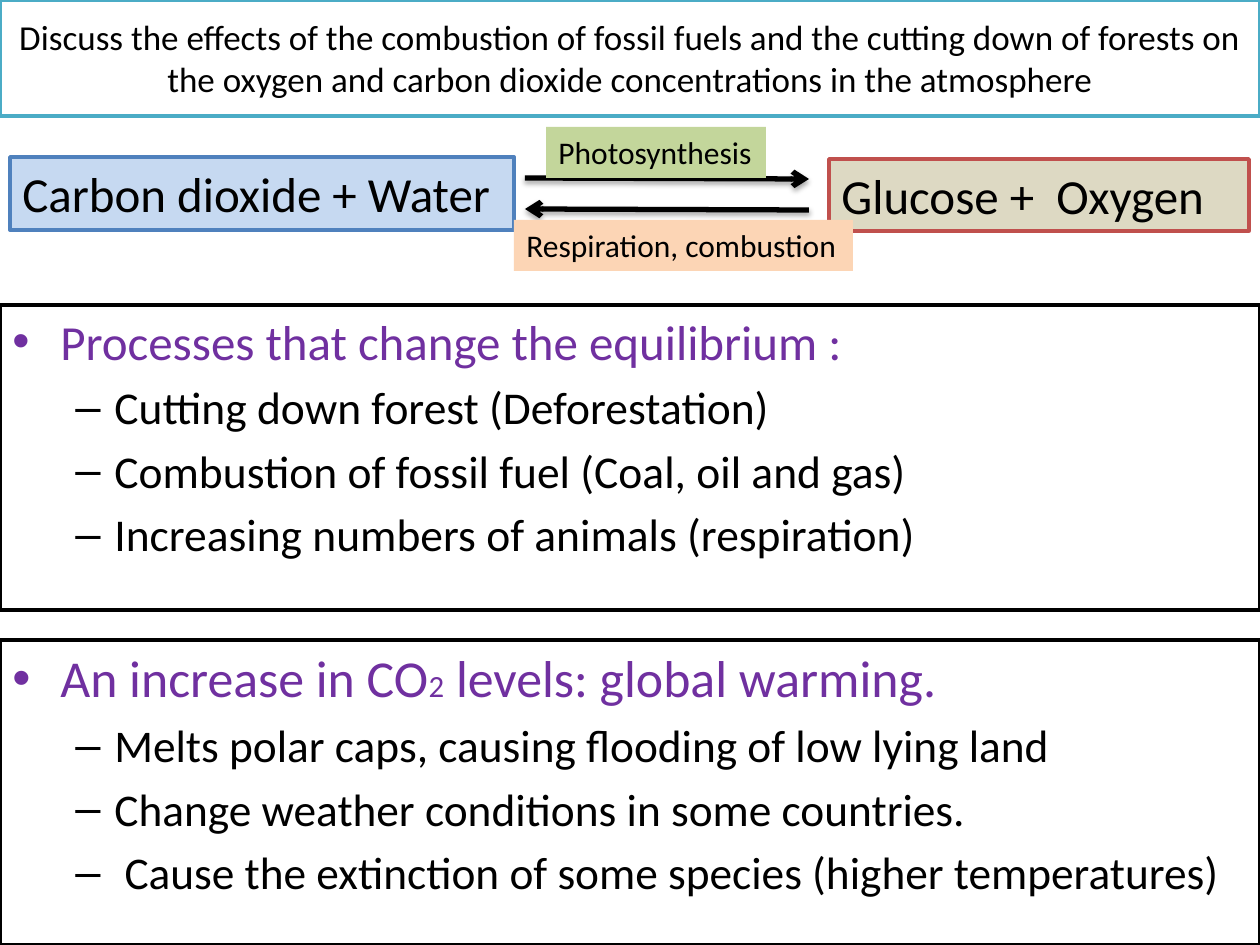
import pptx
import pptx.util
import pptx.dml.color
import pptx.enum.shapes
import pptx.enum.text
import pptx.oxml
import pptx.oxml.ns
from dataclasses import dataclass


@dataclass(frozen=True)
class Theme:
    font: str = "Calibri"
    black: str = "000000"
    white: str = "FFFFFF"
    purple: str = "7030A0"
    aqua: str = "4BACC6"
    blue: str = "4F81BD"
    pale_blue: str = "C6D9F1"
    red: str = "C0504D"
    tan: str = "DDD9C3"
    green: str = "C3D69B"
    orange: str = "FCD5B5"
    title: float = 20
    formula: float = 28
    label: float = 18
    outline: float = 2
    arrow: float = 3


T = Theme()
W, H = 1260, 945
PX = 914400 / 126
ALIGN = pptx.enum.text.PP_ALIGN
ANCHOR = pptx.enum.text.MSO_ANCHOR

TITLE = [
    "Discuss the effects of the combustion of fossil fuels and the cutting down of forests on",
    "the oxygen and carbon dioxide concentrations in the atmosphere",
]
FORMULAS = [
    ("Carbon dioxide + Water", (10, 157, 504, 73), T.pale_blue, T.blue),
    ("Glucose +  Oxygen", (829, 159, 420, 72), T.tan, T.red),
]
ARROWS = [((525, 178), (809, 179)), ((809, 210), (525, 209))]
LABELS = [
    ("Photosynthesis", (546, 127, 220, 51), T.green),
    ("Respiration, combustion", (514, 220, 339, 51), T.orange),
]
PANELS = [
    (305, [("Processes that change the equilibrium :", 28)], 26, [
        "Cutting down forest (Deforestation)",
        "Combustion of fossil fuel (Coal, oil and gas)",
        "Increasing numbers of animals (respiration)",
    ]),
    (640, [("An increase in CO", 29.6), ("2", 17.6), (" levels: global warming.", 29.6)], 25.9, [
        "Melts polar caps, causing flooding of low lying land",
        "Change weather conditions in some countries.",
        " Cause the extinction of some species (higher temperatures)",
    ]),
]
PANEL_H = 305
BULLETS = [("•", 48, 48), ("–", 102, 39)]


def emu(px):
    return round(px * PX)


def rgb(color):
    return pptx.dml.color.RGBColor.from_string(color)


def add_xml(parent, tag, body="", **attrs):
    values = " ".join(f'{k}="{v}"' for k, v in attrs.items())
    ns = pptx.oxml.ns.nsdecls("a")
    parent.append(pptx.oxml.parse_xml(f"<a:{tag} {ns} {values}>{body}</a:{tag}>"))


def add_box(s, at, fill, line=None, anchor=ANCHOR.TOP, wrap=True):
    sp = s.shapes.add_shape(pptx.enum.shapes.MSO_SHAPE.RECTANGLE, *map(emu, at))
    sp.shadow.inherit = False
    sp.fill.solid()
    sp.fill.fore_color.rgb = rgb(fill)
    if line:
        sp.line.color.rgb = rgb(line)
        sp.line.width = pptx.util.Pt(T.outline)
    else:
        sp.line.fill.background()
    tf = sp.text_frame
    tf.word_wrap = wrap
    tf.vertical_anchor = anchor
    tf.paragraphs[0].alignment = ALIGN.LEFT
    return tf


def add_run(p, text, size, color=T.black):
    r = p.add_run()
    r.text = text
    r.font.name = T.font
    r.font.size = pptx.util.Pt(size)
    r.font.color.rgb = rgb(color)


def add_title(s):
    p = add_box(s, (0, 0, W, 116), T.white, T.aqua, ANCHOR.MIDDLE).paragraphs[0]
    p.alignment = ALIGN.CENTER
    for i, text in enumerate(TITLE):
        if i:
            p.add_line_break()
        add_run(p, text, T.title)


def add_arrow(s, start, end):
    kind = pptx.enum.shapes.MSO_CONNECTOR.STRAIGHT
    cx = s.shapes.add_connector(kind, *map(emu, start + end))
    cx.line.color.rgb = rgb(T.black)
    cx.line.width = pptx.util.Pt(T.arrow)
    add_xml(cx.line._get_or_add_ln(), "tailEnd", type="arrow")
    shadow = (
        '<a:outerShdw blurRad="40000" dist="23000" dir="5400000" rotWithShape="0">'
        f'<a:srgbClr val="{T.black}"><a:alpha val="35000"/></a:srgbClr></a:outerShdw>'
    )
    add_xml(cx._element.spPr, "effectLst", shadow)


def add_panel(s, top, heading, size, items):
    tf = add_box(s, (0, top, W, PANEL_H), T.white, T.black)
    rows = [(0, heading, T.purple)] + [(1, [(item, size)], T.black) for item in items]
    for i, (level, runs, color) in enumerate(rows):
        p = tf.add_paragraph() if i else tf.paragraphs[0]
        p.alignment = ALIGN.LEFT
        p.level = level
        char, margin, hang = BULLETS[level]
        pPr = p._p.get_or_add_pPr()
        pPr.set("marL", str(emu(margin)))
        pPr.set("indent", str(-emu(hang)))
        add_xml(pPr, "spcBef", '<a:spcPct val="20000"/>')
        add_xml(pPr, "buFont", typeface="Arial")
        add_xml(pPr, "buChar", char=char)
        for text, run_size in runs:
            add_run(p, text, run_size, color)


def main():
    prs = pptx.Presentation()
    prs.slide_width, prs.slide_height = emu(W), emu(H)
    s = prs.slides.add_slide(prs.slide_layouts[6])
    add_title(s)
    for text, at, fill, line in FORMULAS:
        add_run(add_box(s, at, fill, line).paragraphs[0], text, T.formula)
    for start, end in ARROWS:
        add_arrow(s, start, end)
    for text, at, fill in LABELS:
        add_run(add_box(s, at, fill, wrap=False).paragraphs[0], text, T.label)
    for panel in PANELS:
        add_panel(s, *panel)
    prs.save("out.pptx")


if __name__ == "__main__":
    main()
